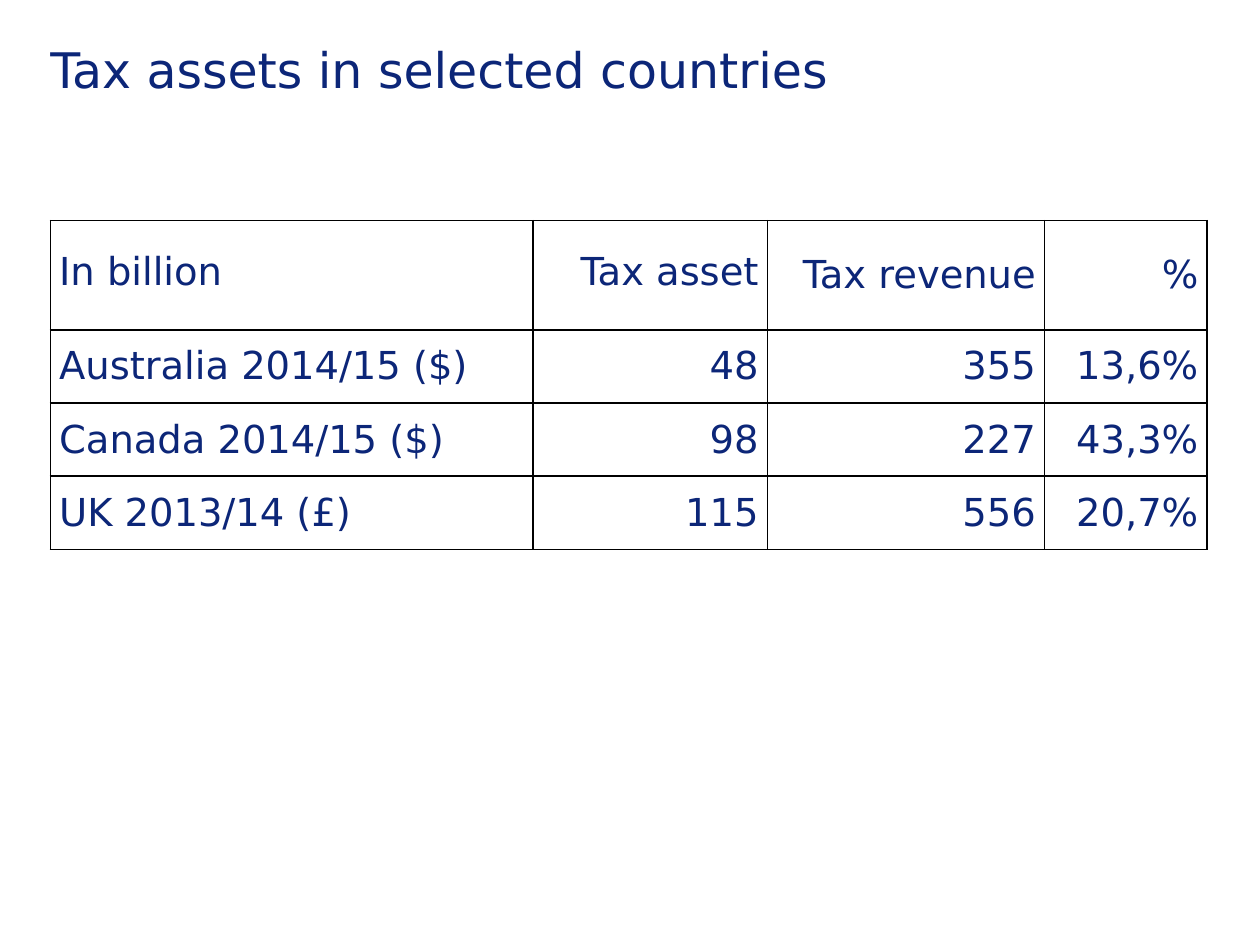
from dataclasses import dataclass

from lxml.etree import SubElement
from pptx import Presentation
from pptx.dml.color import RGBColor
from pptx.enum.text import MSO_ANCHOR as Anchor, MSO_AUTO_SIZE as AutoSize, PP_ALIGN as Align
from pptx.oxml.ns import qn
from pptx.util import Inches, Pt

COLORS = {"text": "0C2678", "border": "000000"}
FONT = "DejaVu Sans"
SLIDE_WIDTH, SLIDE_HEIGHT = Inches(10), Inches(7.5)
MARGIN_SHARE, CONTENT_SHARE = 0.04, 0.918
HEADER_HEIGHT, ROW_HEIGHT = Inches(0.87), Inches(0.58)


@dataclass
class Column:
    heading: str
    width: float  # inches
    values: list[str]
    align: Align = Align.RIGHT
    heading_spacing: float | None = None  # points


COLUMNS = [
    Column("In billion", 3.83,
           ["Australia 2014/15 ($)", "Canada 2014/15 ($)", "UK 2013/14 (£)"],
           Align.LEFT, 22),
    Column("Tax asset", 1.86, ["48", "98", "115"], heading_spacing=22),
    Column("Tax revenue", 2.2, ["355", "227", "556"]),
    Column("%", 1.29, ["13,6%", "43,3%", "20,7%"]),
]


def format_paragraph(paragraph, size: float, align: Align, spacing: float | None = None) -> None:
    paragraph.alignment = align
    if spacing:
        paragraph.line_spacing = Pt(spacing)
    for run in paragraph.runs:
        run.font.name = FONT
        run.font.size = Pt(size)
        run.font.bold = False
        run.font.color.rgb = RGBColor.from_string(COLORS["text"])


def add_borders(cell, width: float = 1) -> None:
    properties = cell._tc.get_or_add_tcPr()
    for index, side in enumerate(("lnL", "lnR", "lnT", "lnB")):
        line = properties.makeelement(qn(f"a:{side}"), {"w": str(Pt(width))})
        fill = SubElement(line, qn("a:solidFill"))
        SubElement(fill, qn("a:srgbClr"), val=COLORS["border"])
        properties.insert(index, line)


def fill_cell(cell, text: str, align: Align, spacing: float | None) -> None:
    cell.text_frame.text = text
    cell.vertical_anchor = Anchor.MIDDLE
    cell.margin_left = cell.margin_right = Inches(0.07)
    cell.margin_top = cell.margin_bottom = Inches(0.04)
    cell.fill.background()
    format_paragraph(cell.text_frame.paragraphs[0], 22, align, spacing)
    add_borders(cell)


def add_title(slide, text: str) -> None:
    title = slide.shapes.title
    title.left, title.top = int(SLIDE_WIDTH * MARGIN_SHARE), Inches(0.39)
    title.width, title.height = int(SLIDE_WIDTH * CONTENT_SHARE), Inches(0.68)
    frame = title.text_frame
    frame.text = text
    frame.word_wrap = True
    frame.auto_size = AutoSize.NONE
    frame.vertical_anchor = Anchor.TOP
    frame.margin_left = frame.margin_right = frame.margin_top = frame.margin_bottom = 0
    format_paragraph(frame.paragraphs[0], 28, Align.LEFT, 28)


def add_tax_table(slide, columns: list[Column]) -> None:
    row_count = len(columns[0].values) + 1
    table = slide.shapes.add_table(
        row_count, len(columns), int(SLIDE_WIDTH * MARGIN_SHARE), Inches(1.75),
        int(SLIDE_WIDTH * CONTENT_SHARE), HEADER_HEIGHT + ROW_HEIGHT * (row_count - 1)).table
    table.first_row = table.horz_banding = False
    for index, row in enumerate(table.rows):
        row.height = ROW_HEIGHT if index else HEADER_HEIGHT
    for column_index, column in enumerate(columns):
        table.columns[column_index].width = Inches(column.width)
        for row_index, text in enumerate([column.heading, *column.values]):
            spacing = None if row_index else column.heading_spacing
            fill_cell(table.cell(row_index, column_index), text, column.align, spacing)


def main() -> None:
    presentation = Presentation()
    presentation.slide_width, presentation.slide_height = SLIDE_WIDTH, SLIDE_HEIGHT
    # Title-only layout
    slide = presentation.slides.add_slide(presentation.slide_layouts[5])
    add_title(slide, "Tax assets in selected countries")
    add_tax_table(slide, COLUMNS)
    presentation.save("out.pptx")


if __name__ == "__main__":
    main()
